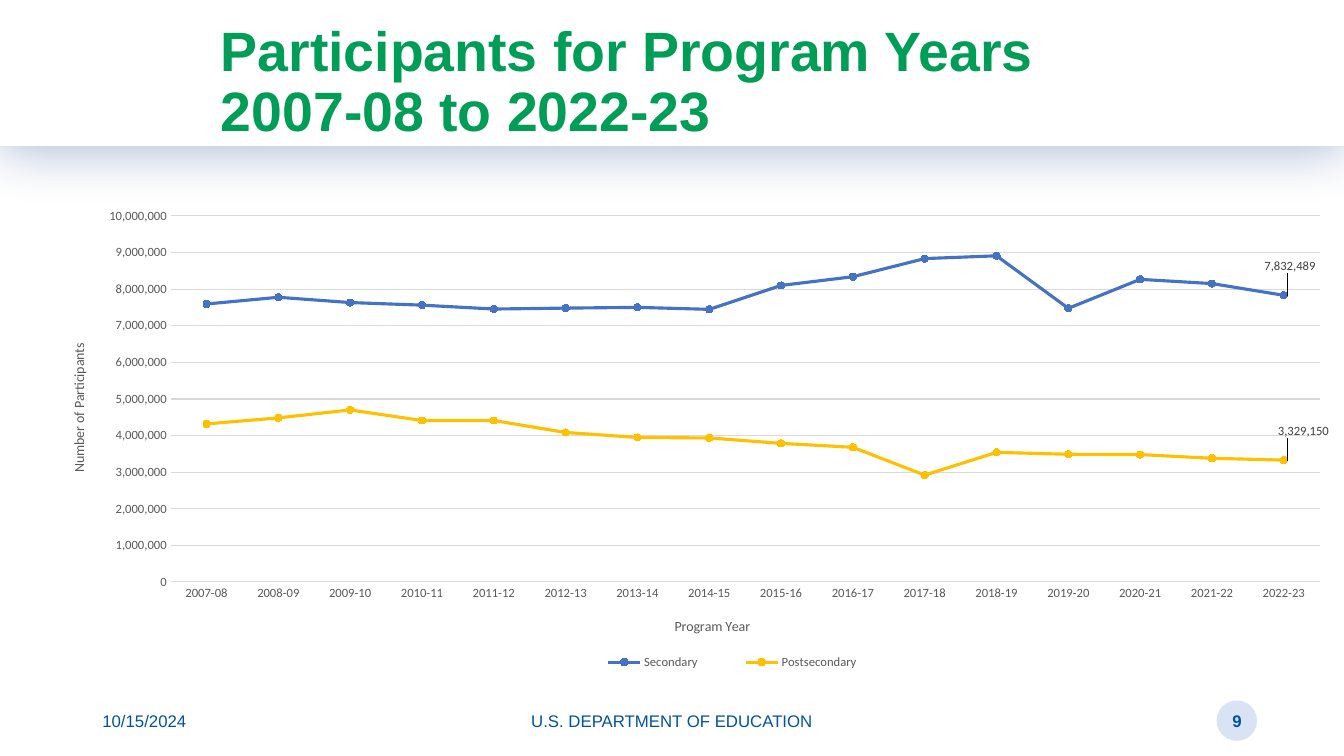
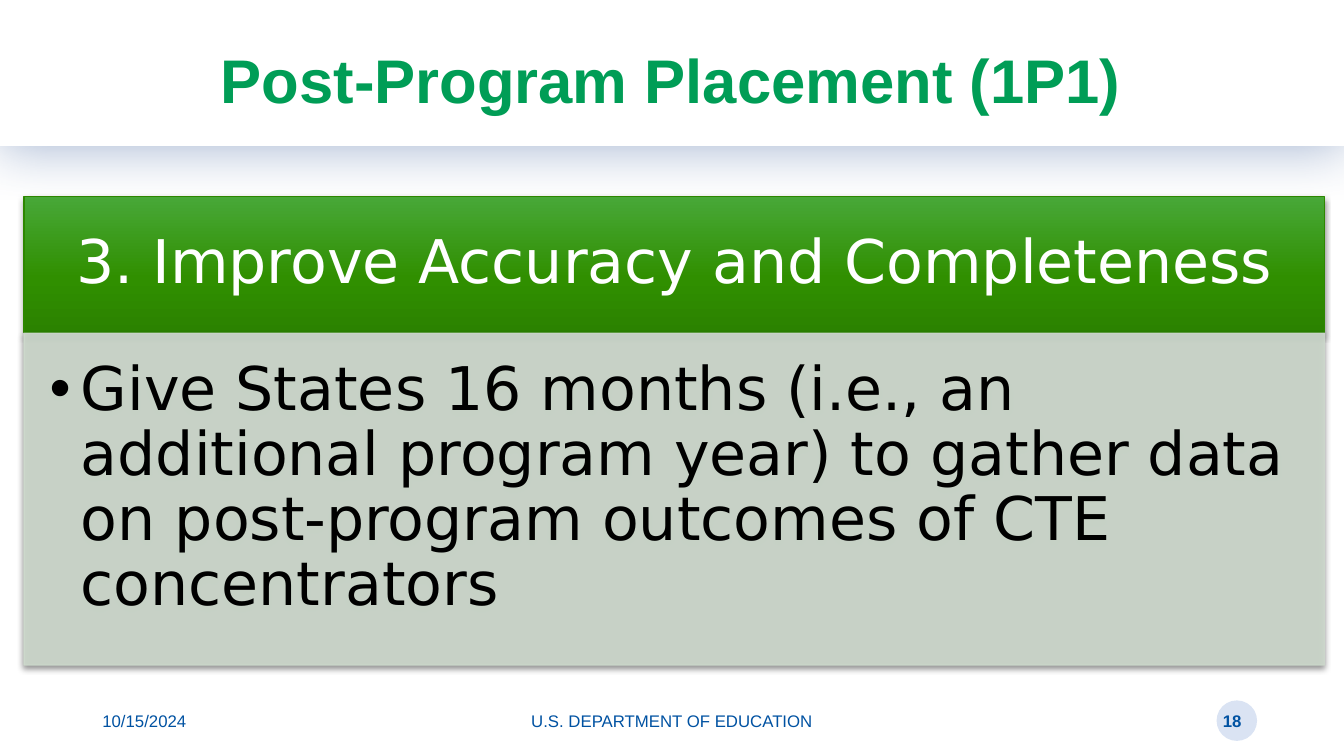
from copy import deepcopy

from lxml.etree import SubElement
from pptx import Presentation
from pptx.chart.data import CategoryChartData
from pptx.dml.color import RGBColor
from pptx.enum.chart import (XL_CHART_TYPE, XL_LABEL_POSITION, XL_LEGEND_POSITION,
                             XL_MARKER_STYLE, XL_TICK_MARK)
from pptx.enum.shapes import MSO_SHAPE
from pptx.enum.text import MSO_ANCHOR, MSO_AUTO_SIZE, PP_ALIGN
from pptx.oxml.ns import qn
from pptx.util import Cm, Pt

color = RGBColor.from_string

GREEN, BLUE, PALE_BLUE = "009D56", "0052A2", "DAE3F3"
WHITE, BLACK, SAGE = "FFFFFF", "000000", "CDD9CC"
GRAY, GRID = "595959", "D9D9D9"
WIDTH, HEIGHT = Cm(33.87), Cm(19.05)
BAND_HEIGHT = Cm(3.68)
FOOTER_TOP, FOOTER_HEIGHT = Cm(17.65), Cm(1.02)


def cast_shadow(shape, hex_color, alpha, blur, distance):
    shape.shadow.inherit = False
    effects = shape._element.spPr.find(qn("a:effectLst"))
    shadow = SubElement(effects, qn("a:outerShdw"), blurRad=str(Pt(blur)),
                        dist=str(Pt(distance)), dir="5400000", algn="t", rotWithShape="0")
    tone = SubElement(shadow, qn("a:srgbClr"), val=hex_color)
    SubElement(tone, qn("a:alpha"), val=str(alpha * 1000))


def style_font(font, name, size, hex_color, bold=False):
    font.name, font.size, font.bold = name, Pt(size), bold
    font.color.rgb = color(hex_color)


deck = Presentation()
deck.slide_width, deck.slide_height = WIDTH, HEIGHT

# Shared frame: title band, title and footer
slides = []
for heading, heading_size, number in (
    ("Participants for Program Years\v2007-08 to 2022-23", 39.6, "9"),
    ("Post-Program Placement (1P1)", 44, "18"),
):
    slide = deck.slides.add_slide(deck.slide_layouts[5])
    slides.append(slide)

    badge = slide.shapes.add_shape(MSO_SHAPE.OVAL, Cm(30.66), FOOTER_TOP,
                                   FOOTER_HEIGHT, FOOTER_HEIGHT)
    badge.shadow.inherit = False
    band = slide.shapes.add_shape(MSO_SHAPE.RECTANGLE, 0, 0, WIDTH, BAND_HEIGHT)
    cast_shadow(band, "2F5597", 40, 38, 3)
    for part, fill_color in ((badge, PALE_BLUE), (band, WHITE)):
        part.fill.solid()
        part.fill.fore_color.rgb = color(fill_color)
        part.line.fill.background()

    for text, left, width, align in (
        ("10/15/2024", 2.33, 7.62, PP_ALIGN.LEFT),
        ("U.S. DEPARTMENT OF EDUCATION", 11.22, 11.43, PP_ALIGN.CENTER),
        (number, 23.92, 7.62, PP_ALIGN.RIGHT),
    ):
        footer = slide.shapes.add_textbox(Cm(left), FOOTER_TOP, Cm(width), FOOTER_HEIGHT)
        frame = footer.text_frame
        frame.word_wrap = True
        frame.vertical_anchor = MSO_ANCHOR.MIDDLE
        frame.text = text
        frame.paragraphs[0].alignment = align
        style_font(frame.paragraphs[0].runs[0].font, "Arial", 12, BLUE, text == number)

    # The title comes in front of the band
    title = slide.shapes.title
    slide.shapes._spTree.append(title._element)
    title.left, title.top, title.width, title.height = Cm(5.31), Cm(1.02), Cm(26.24), Cm(2.16)
    frame = title.text_frame
    frame.text = heading
    frame.auto_size = MSO_AUTO_SIZE.NONE
    frame.vertical_anchor = MSO_ANCHOR.MIDDLE
    paragraph = frame.paragraphs[0]
    paragraph.alignment = PP_ALIGN.LEFT
    paragraph.line_spacing = 0.9
    for run in paragraph.runs:
        style_font(run.font, "Arial", heading_size, GREEN, True)

trend_slide, placement_slide = slides

# Participants chart
participants = CategoryChartData(number_format="#,##0")
participants.categories = [f"{year}-{(year + 1) % 100:02}" for year in range(2007, 2023)]
participants.add_series("Secondary", (
    7594929, 7778305, 7633468, 7563925, 7457637, 7482280, 7502727, 7448738,
    8100687, 8339930, 8835158, 8910991, 7476815, 8268511, 8151708, 7832489))
participants.add_series("Postsecondary", (
    4318161, 4483006, 4700487, 4411875, 4412135, 4084561, 3948554, 3935025,
    3786387, 3678581, 2919106, 3539930, 3488168, 3479754, 3378793, 3329150))
chart = trend_slide.shapes.add_chart(XL_CHART_TYPE.LINE_MARKERS, 0, Cm(5.08), WIDTH, Cm(12.09),
                                     participants).chart
chart.has_title = False
style_font(chart.font, "Calibri", 10, BLACK)
chart.has_legend = True
chart.legend.position = XL_LEGEND_POSITION.BOTTOM
chart.legend.include_in_layout = False
style_font(chart.legend.font, "Calibri", 9, GRAY)

# Axes
years, counts = chart.category_axis, chart.value_axis
for axis, caption in ((years, "Program Year"), (counts, "Number of Participants")):
    axis.major_tick_mark = axis.minor_tick_mark = XL_TICK_MARK.NONE
    style_font(axis.tick_labels.font, "Calibri", 9, GRAY)
    axis.axis_title.text_frame.text = caption
    style_font(axis.axis_title.text_frame.paragraphs[0].runs[0].font, "Calibri", 10, GRAY)
counts.minimum_scale, counts.maximum_scale, counts.major_unit = 0, 10_000_000, 1_000_000
counts.tick_labels.number_format = "#,##0"
counts.tick_labels.number_format_is_linked = False
counts.format.line.fill.background()
for line in (years.format.line, counts.major_gridlines.format.line):
    line.color.rgb = color(GRID)
    line.width = Pt(0.75)

# Series, with the last year labelled
last_labels = []
for series, series_color in zip(chart.plots[0].series, ("4472C4", "FFC000")):
    series.smooth = False
    series.format.line.color.rgb = color(series_color)
    series.format.line.width = Pt(2.25)
    series.marker.style = XL_MARKER_STYLE.CIRCLE
    series.marker.size = 5
    series.marker.format.fill.solid()
    series.marker.format.fill.fore_color.rgb = color(series_color)
    series.marker.format.line.color.rgb = color(series_color)
    series.data_labels.show_value = False
    last_label = series.points[15].data_label
    style_font(last_label.font, "Calibri", 9, "404040")
    last_label.position = XL_LABEL_POSITION.RIGHT
    labels = series.data_labels._element
    last_labels.append(labels.find(qn("c:dLbl")))
    # Leader lines of a line chart need the 2012 extension
    c15 = "http://schemas.microsoft.com/office/drawing/2012/chart"
    extension = SubElement(SubElement(labels, qn("c:extLst")), qn("c:ext"),
                           nsmap={"c15": c15}, uri="{CE6537A1-D6FC-4f65-9D91-7224C49458BB}")
    SubElement(extension, f"{{{c15}}}showLeaderLines", val="1")

# Places inside the chart, as shares of its size (labels: offsets)
plot_area = chart._chartSpace.chart.plotArea
for owner, index, places in (
    (plot_area, 0, dict(layoutTarget="inner", xMode="edge", yMode="edge",
                        x=0.127, y=0.03, w=0.855, h=0.763)),
    (chart.legend._element, 1, dict(xMode="edge", yMode="edge", x=0.42, y=0.93, w=0.25, h=0.06)),
    (years.axis_title._element, 1, dict(xMode="edge", yMode="edge", x=0.5, y=0.86)),
    (counts.axis_title._element, 1, dict(xMode="edge", yMode="edge", x=0.05, y=0.29)),
    (last_labels[0], 1, dict(x=-0.02, y=-0.06)),
    (last_labels[1], 1, dict(x=-0.01, y=-0.06)),
):
    for old_layout in owner.findall(qn("c:layout")):
        owner.remove(old_layout)
    layout = SubElement(owner, qn("c:layout"))
    owner.insert(index, layout)
    manual = SubElement(layout, qn("c:manualLayout"))
    for key, value in places.items():
        SubElement(manual, qn(f"c:{key}"), val=str(value))

# Recommendation: header and body
PANEL_LEFT, PANEL_WIDTH = Cm(0.61), Cm(32.77)
panels = []
for text, top, height, insets, anchor, align, text_color in (
    ("3. Improve Accuracy and Completeness", 4.95, 3.43, (0.84, 0.48, 0.84, 0.48),
     MSO_ANCHOR.MIDDLE, PP_ALIGN.CENTER, WHITE),
    ("Give States 16 months (i.e., an additional program year) to gather data on "
     "post-program outcomes of CTE concentrators", 8.4, 8.36, (0.64, 0.64, 0.84, 0.97),
     MSO_ANCHOR.TOP, PP_ALIGN.LEFT, BLACK),
):
    panel = placement_slide.shapes.add_shape(MSO_SHAPE.RECTANGLE, PANEL_LEFT, Cm(top),
                                             PANEL_WIDTH, Cm(height))
    panels.append(panel)
    panel.line.width = Pt(1)
    cast_shadow(panel, BLACK, 47, 4, 2.5)
    frame = panel.text_frame
    frame.word_wrap = True
    frame.vertical_anchor = anchor
    (frame.margin_left, frame.margin_top,
     frame.margin_right, frame.margin_bottom) = map(Cm, insets)
    frame.text = text
    paragraph = frame.paragraphs[0]
    paragraph.alignment = align
    paragraph.line_spacing = 0.9
    style_font(paragraph.runs[0].font, "DejaVu Sans", 43, text_color)
header, body = panels

# Header: three-stop green gradient, light at the top
header.line.color.rgb = color("2D8700")
header.fill.gradient()
header.fill.gradient_angle = 270
stop_list = header._element.spPr.find(".//" + qn("a:gsLst"))
stop_list.append(deepcopy(stop_list[-1]))
for stop, (position, stop_color) in zip(header.fill.gradient_stops,
                                        ((0, "48A838"), (0.6, "308F00"), (1, "2B8200"))):
    stop.position = position
    stop.color.rgb = color(stop_color)

# Body: slightly transparent, one bullet
body.fill.solid()
body.fill.fore_color.rgb = color(SAGE)
body.line.color.rgb = color(SAGE)
for tone in body._element.spPr.findall(".//" + qn("a:solidFill") + "/" + qn("a:srgbClr")):
    SubElement(tone, qn("a:alpha"), val="90000")
properties = body.text_frame.paragraphs[0]._p.get_or_add_pPr()
properties.set("marL", str(Cm(0.79)))
properties.set("indent", str(-Cm(0.79)))
SubElement(properties, qn("a:buFont"), typeface="Arial")
SubElement(properties, qn("a:buChar"), char="•")

deck.save("out.pptx")
